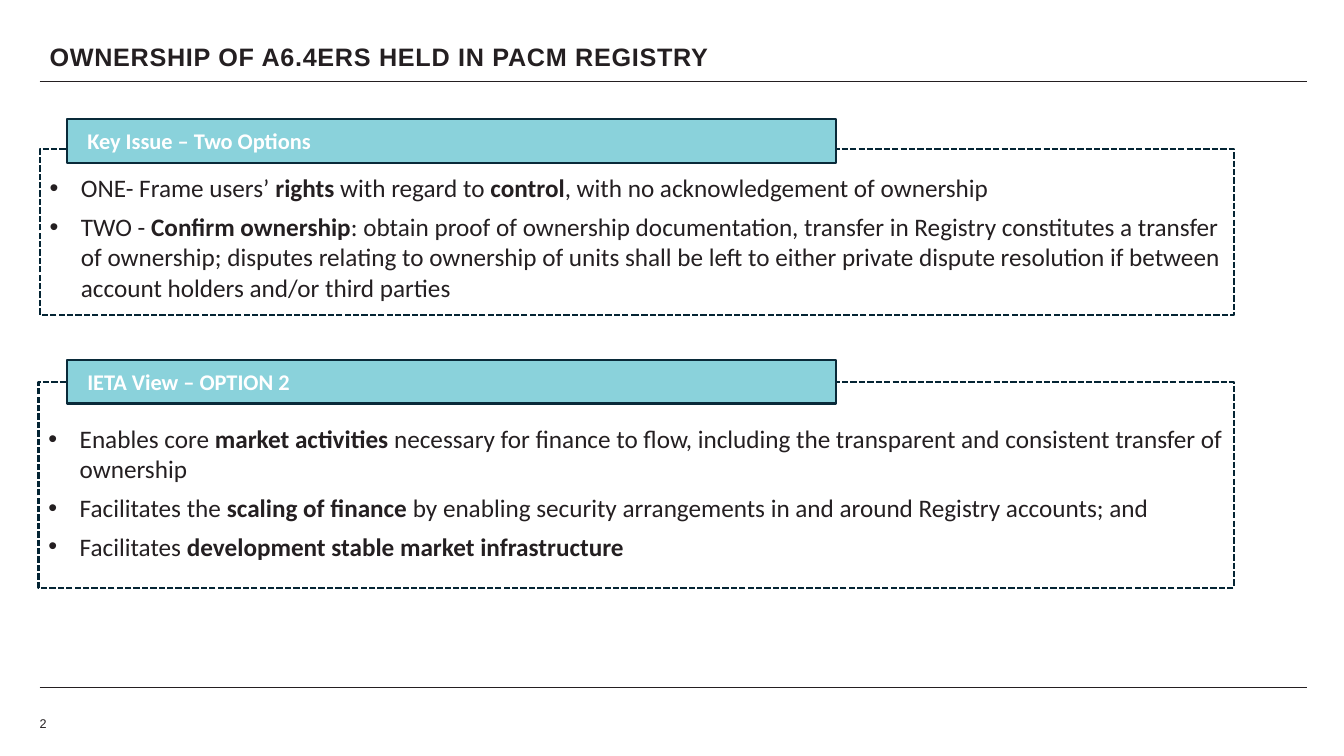
from lxml import etree
from pptx import Presentation
from pptx import util as u
from pptx.dml.color import RGBColor
from pptx.enum import dml, shapes, text
from pptx.oxml.ns import qn

INK = "241F21"


def color(value):
    return RGBColor.from_string(value)


def add_run(paragraph, words, size, face, tint=INK, bold=False):
    run = paragraph.add_run()
    run.text = words
    run.font.size = u.Pt(size)
    run.font.name = face
    run.font.bold = bold
    run.font.color.rgb = color(tint)
    return run


deck = Presentation()
deck.slide_width = u.Cm(33.87)
deck.slide_height = u.Cm(19.05)
slide = deck.slides.add_slide(deck.slide_layouts[6])

for rule_y in (2.06, 17.32):
    rule = slide.shapes.add_connector(
        shapes.MSO_CONNECTOR.STRAIGHT, u.Cm(1), u.Cm(rule_y), u.Cm(32.94), u.Cm(rule_y))
    rule.line.color.rgb = color(INK)
    rule.line.width = u.Pt(1)
    etree.SubElement(rule._element.spPr, qn("a:effectLst"))

page_number = slide.shapes.add_textbox(u.Cm(1), u.Cm(17.98), u.Cm(1), u.Cm(0.51)).text_frame
page_number.word_wrap = True
page_number.vertical_anchor = text.MSO_ANCHOR.MIDDLE
page_number.margin_left = page_number.margin_right = 0
page_number.margin_top = page_number.margin_bottom = 0
add_run(page_number.paragraphs[0], "2", 9, "Arial")

title = slide.shapes.add_textbox(u.Cm(1), u.Cm(1), u.Cm(29.2), u.Cm(0.76)).text_frame
title.word_wrap = True
title.paragraphs[0].line_spacing = 0.9
heading = add_run(title.paragraphs[0], "OWNERSHIP OF A6.4ERS HELD IN PACM REGISTRY", 18, "Arial", bold=True)
heading.font._element.set("spc", "50")

sections = [
    ("Key Issue – Two Options", 3, (1, 3.76, 30.1, 4.17), 0.4, [
        [("ONE- Frame users’ ", False), ("rights ", True), ("with regard to ", False),
         ("control", True), (", with no acknowledgement of ownership", False)],
        [("TWO - ", False), ("Confirm ownership", True),
         (": obtain proof of ownership documentation, transfer in Registry constitutes a transfer "
          "of ownership; disputes relating to ownership of units shall be left to either private "
          "dispute resolution if between account holders and/or third parties", False)],
    ]),
    ("IETA View – OPTION 2", 9.07, (0.97, 9.63, 30.12, 5.18), 0.5, [
        [("Enables core ", False), ("market activities", True),
         (" necessary for finance to flow, including the transparent and consistent transfer of "
          "ownership", False)],
        [("Facilitates the ", False), ("scaling of finance", True),
         (" by enabling security arrangements in and around Registry accounts; and", False)],
        [("Facilitates ", False), ("development stable market infrastructure", True)],
    ]),
]

for label, label_top, frame_box, top_margin, points in sections:
    frame = slide.shapes.add_shape(shapes.MSO_SHAPE.RECTANGLE, *map(u.Cm, frame_box))
    frame.shadow.inherit = False
    frame.fill.background()
    frame.line.color.rgb = color("042433")
    frame.line.width = u.Pt(1.5)
    frame.line.dash_style = dml.MSO_LINE.SQUARE_DOT
    body = frame.text_frame
    body.word_wrap = True
    body.vertical_anchor = text.MSO_ANCHOR.MIDDLE
    body.margin_top = u.Cm(top_margin)

    for index, point in enumerate(points):
        paragraph = body.add_paragraph() if index else body.paragraphs[0]
        paragraph.alignment = text.PP_ALIGN.LEFT
        paragraph.space_before = u.Pt(3 if index else 0)
        paragraph.space_after = u.Pt(3)
        properties = paragraph._p.get_or_add_pPr()
        properties.set("marL", str(u.Cm(0.79)))
        properties.set("indent", str(-u.Cm(0.79)))
        bullet_tint = etree.SubElement(properties, qn("a:buClr"))
        etree.SubElement(bullet_tint, qn("a:srgbClr"), val=INK)
        etree.SubElement(properties, qn("a:buFont"), typeface="Arial")
        etree.SubElement(properties, qn("a:buChar"), char="•")
        for words, bold in point:
            add_run(paragraph, words, 18, "Calibri", bold=bold)

    banner = slide.shapes.add_shape(
        shapes.MSO_SHAPE.RECTANGLE, u.Cm(1.7), u.Cm(label_top), u.Cm(19.38), u.Cm(1.1))
    banner.shadow.inherit = False
    banner.fill.solid()
    banner.fill.fore_color.rgb = color("8AD2DB")
    banner.line.color.rgb = color("092A39")
    banner.line.width = u.Pt(1.5)
    caption = banner.text_frame
    caption.word_wrap = True
    caption.vertical_anchor = text.MSO_ANCHOR.MIDDLE
    caption.margin_left = u.Cm(0.5)
    caption.paragraphs[0].alignment = text.PP_ALIGN.LEFT
    add_run(caption.paragraphs[0], label, 16, "Calibri", "FFFFFF", True)

deck.save("out.pptx")
